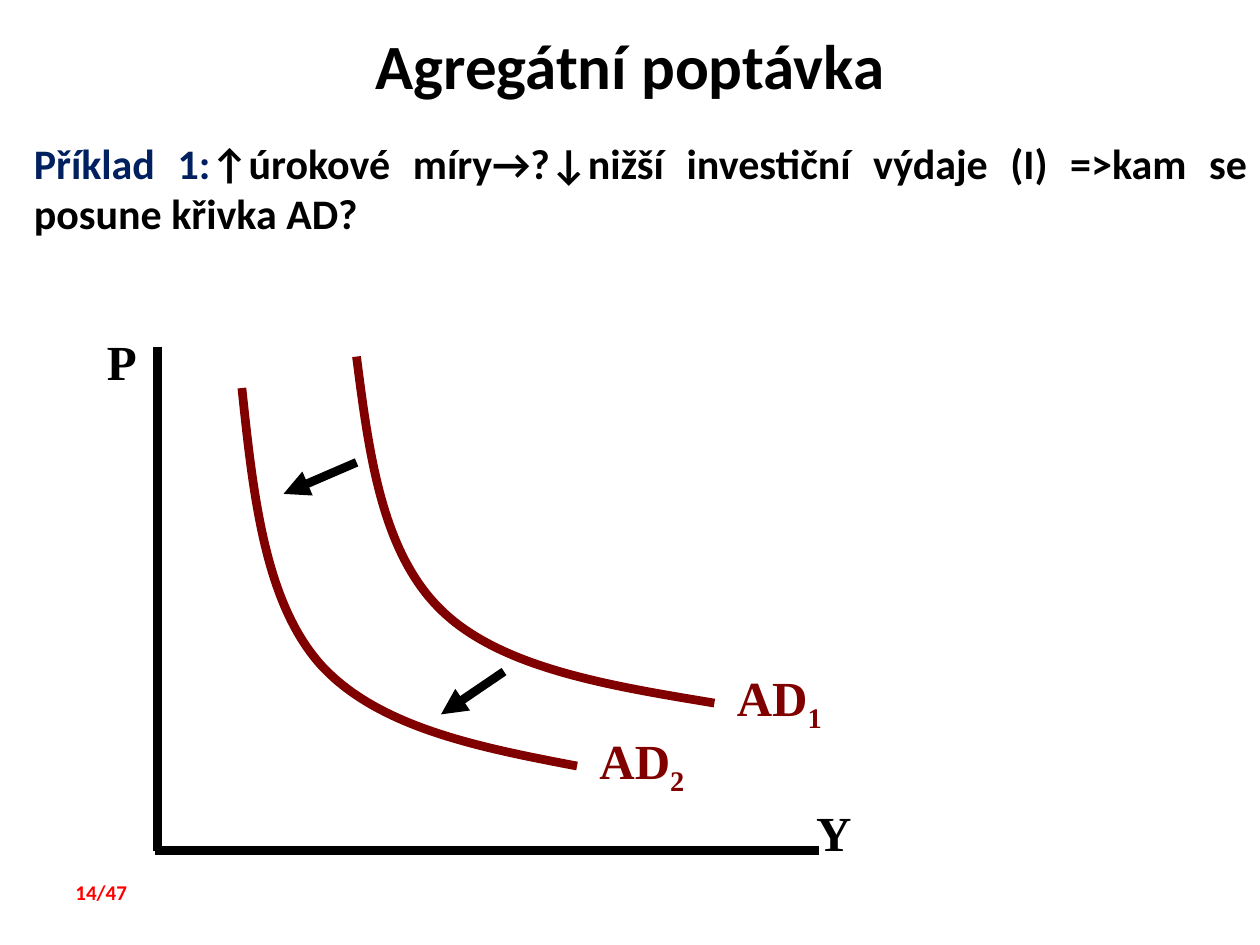
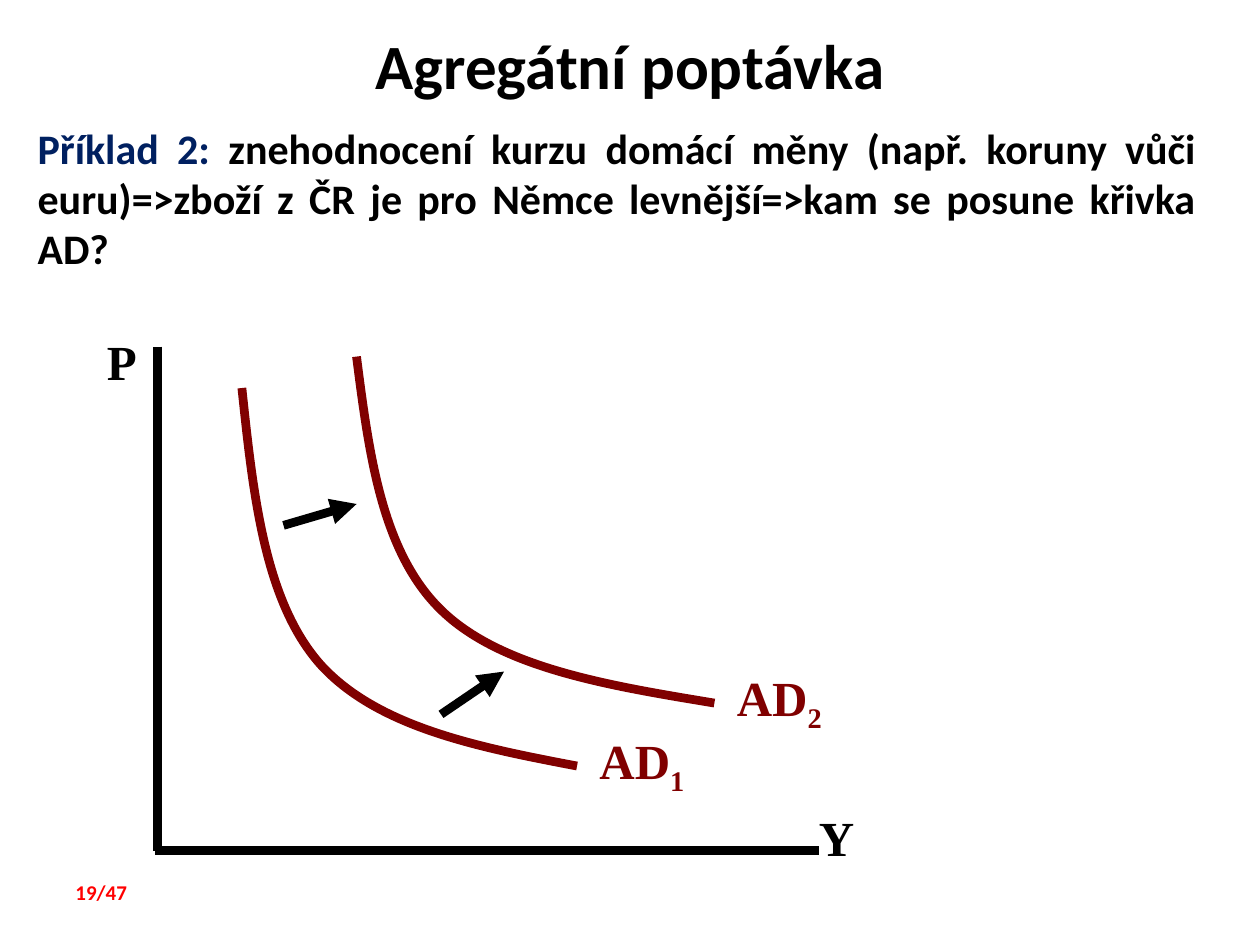
from pptx import Presentation
from pptx.dml.color import RGBColor
from pptx.enum import shapes, text
from pptx.oxml import ns, xmlchemy
from pptx.util import Inches, Pt

BLACK, NAVY, MAROON, RED, WHITE = "000000", "002060", "800000", "FF0000", "FFFFFF"
SANS, SERIF = "Calibri", "Times New Roman"
ALIGN = text.PP_ALIGN
TOTAL = 47


def color(code):
    return RGBColor.from_string(code)


def write(shape, runs, size=28, font=SERIF, align=ALIGN.LEFT):
    """Fill a shape with one paragraph; runs are (words, colour, baseline)."""
    frame = shape.text_frame
    frame.word_wrap = True
    frame.auto_size = text.MSO_AUTO_SIZE.NONE
    frame.vertical_anchor = text.MSO_ANCHOR.TOP
    para = frame.paragraphs[0]
    para.alignment = align
    para.space_before = Pt(0)
    for words, code, base in runs:
        run = para.add_run()
        run.text = words
        run.font.size, run.font.name, run.font.bold = Pt(size), font, True
        run.font.color.rgb = color(code)
        if base:
            run._r.get_or_add_rPr().set("baseline", str(base * 1000))


def label(slide, box, runs, **fmt):
    write(slide.shapes.add_textbox(*map(Inches, box)), runs, **fmt)


def line(slide, start, end, width=5, arrow=False):
    ends = map(Inches, (*start, *end))
    link = slide.shapes.add_connector(shapes.MSO_CONNECTOR.STRAIGHT, *ends)
    link.line.color.rgb = color(BLACK)
    link.line.width = Pt(width)
    if arrow:
        head = xmlchemy.OxmlElement("a:tailEnd")
        head.set("type", "triangle")
        link.line._get_or_add_ln().append(head)
    link._element.spPr.append(xmlchemy.OxmlElement("a:effectLst"))


def curve(slide, points):
    """Draw a Bézier chain: a start, then three points per segment."""
    start, *rest = [(Inches(x), Inches(y)) for x, y in points]
    build = slide.shapes.build_freeform(*start)
    build.add_line_segments(rest, close=False)
    shape = build.convert_to_shape()
    lines = list(shape._element.iter(ns.qn("a:lnTo")))
    for i in range(0, len(lines), 3):
        bend = xmlchemy.OxmlElement("a:cubicBezTo")
        lines[i].addprevious(bend)
        for part in lines[i:i + 3]:
            bend.append(part[0])
            part.getparent().remove(part)
    shape.fill.background()
    shape.shadow.inherit = False
    shape.line.color.rgb = color(MAROON)
    shape.line.width = Pt(5)


# Demand curves and arrows, measured from the corner of the graph
INNER = [(1.17, 0.5), (1.26, 1.35), (1.35, 2.19), (1.79, 2.69),
         (2.24, 3.19), (3.04, 3.35), (3.83, 3.5)]
OUTER = [(2.08, 0.25), (2.18, 1.03), (2.28, 1.8), (2.75, 2.26),
         (3.22, 2.72), (4.07, 2.86), (4.92, 3)]
LEFT = [((2.08, 1.09), (1.5, 1.34)), ((3.25, 2.75), (2.75, 3.09))]
RIGHT = [((1.5, 1.59), (2.08, 1.42)), ((2.75, 3.09), (3.25, 2.75))]


def graph(slide, x, y, names, arrows, income):
    def at(point):
        return x + point[0], y + point[1]

    # Axes
    label(slide, (x, y, 0.67, 0.57), [("P", BLACK, 0)])
    label(slide, (*at(income), 0.67, 0.57), [("Y", BLACK, 0)])
    line(slide, at((0.5, 0.17)), at((0.5, 4.17)), width=5.5)
    line(slide, at((0.48, 4.17)), at((5.75, 4.17)))
    # Curves, each named just right of its end
    for points, name in zip((INNER, OUTER), names):
        curve(slide, [at(p) for p in points])
        end = at(points[-1])
        label(slide, (end[0] + 0.08, end[1] - 0.33, 1.17, 0.57),
              [("AD", MAROON, 0), (name, MAROON, -25)])
    # Direction of the shift
    for start, end in arrows:
        line(slide, at(start), at(end), arrow=True)


def header(slide):
    title = slide.shapes.title
    title.left, title.top, title.width, title.height = map(
        Inches, (0, 0.16, 10, 0.7))
    title.fill.solid()
    title.fill.fore_color.rgb = color(WHITE)
    write(title, [("Agregátní poptávka", BLACK, 0)],
          size=36, font=SANS, align=ALIGN.CENTER)


def footer(slide, page):
    label(slide, (0.5, 6.93, 0.92, 0.3), [(f"{page}/{TOTAL}", RED, 0)],
          size=12, font=SANS)


def example(deck, page, box, lead, task, **shift):
    slide = deck.slides.add_slide(deck.slide_layouts[5])
    header(slide)
    label(slide, box, [(lead, NAVY, 0), (task, BLACK, 0)],
          size=24, font=SANS, align=ALIGN.JUSTIFY)
    graph(slide, 0.75, 2.58, **shift)
    footer(slide, page)


def main():
    deck = Presentation()
    deck.slide_width, deck.slide_height = Inches(10), Inches(7.5)
    example(deck, 14, (0.17, 1.04, 9.83, 0.91), "Příklad 1:",
            "↑úrokové míry→?↓nižší investiční výdaje (I) =>kam se posune "
            "křivka AD?",
            names="21", arrows=LEFT, income=(5.63, 3.74))
    example(deck, 19, (0.2, 0.92, 9.39, 1.31), "Příklad 2: ",
            "znehodnocení kurzu domácí měny (např. koruny vůči euru)=>zboží "
            "z ČR je pro Němce levnější=>kam se posune křivka AD?",
            names="12", arrows=RIGHT, income=(5.65, 3.78))
    deck.save("out.pptx")


if __name__ == "__main__":
    main()
